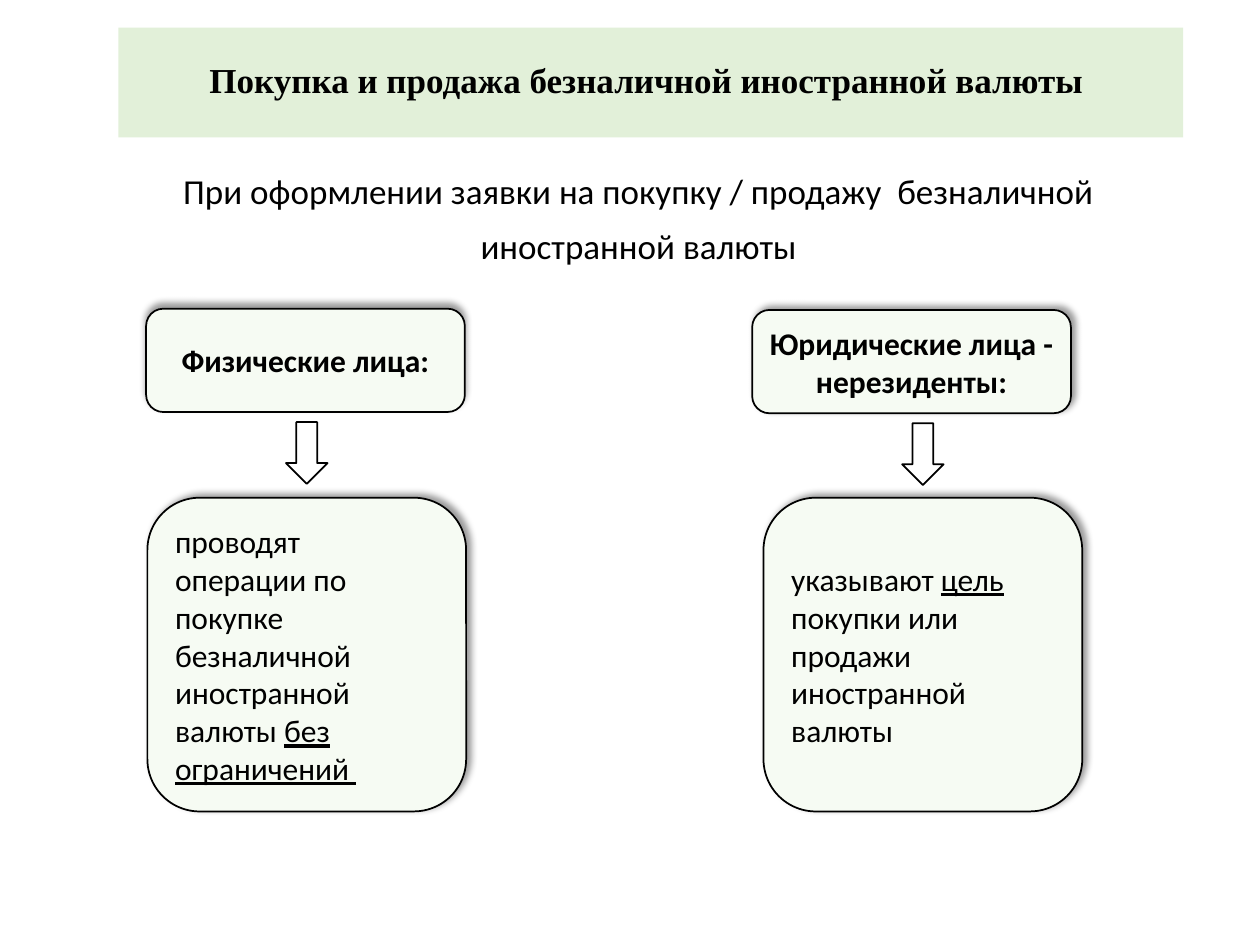
from dataclasses import dataclass

from lxml import etree
from pptx import Presentation
from pptx.dml.color import RGBColor
from pptx.enum.shapes import MSO_SHAPE
from pptx.enum.text import MSO_ANCHOR, MSO_AUTO_SIZE, PP_ALIGN
from pptx.oxml.ns import qn
from pptx.util import Inches, Pt

ROUNDED = MSO_SHAPE.ROUNDED_RECTANGLE
DOWN_ARROW = MSO_SHAPE.DOWN_ARROW
MIDDLE, TOP = MSO_ANCHOR.MIDDLE, MSO_ANCHOR.TOP
NO_AUTOFIT = MSO_AUTO_SIZE.NONE
CENTER, LEFT = PP_ALIGN.CENTER, PP_ALIGN.LEFT

COLUMNS, ROWS = 100, 75
WIDTH, HEIGHT = Inches(10), Inches(7.5)
BLACK, WHITE = "000000", "FFFFFF"
TITLE_GREEN, CARD_GREEN = "E2F0D9", "F6FBF3"
BOX_COLUMNS, HEADER_ROWS, DETAIL_ROWS = 25.3, 8.2, 24.9
ARROW_COLUMNS, ARROW_ROWS = 3.3, 4.9


@dataclass(frozen=True)
class Area:
    column: float
    row: float
    columns: float
    rows: float


@dataclass(frozen=True)
class Run:
    text: str
    size: int = 18
    bold: bool = False
    underline: bool = False
    font: str = "Calibri"


@dataclass(frozen=True)
class Branch:
    header_column: float
    header_row: float
    detail_column: float
    header_shadow: int
    header: str
    detail: tuple[Run, ...]


BRANCHES = (
    Branch(11.6, 24.5, 11.7, 270, "Физические лица:", (
        Run("проводят операции по покупке безналичной иностранной валюты "),
        Run("без ограничений ", underline=True),
    )),
    Branch(59.7, 24.6, 60.6, 315, "Юридические лица - нерезиденты:", (
        Run("указывают "),
        Run("цель", underline=True),
        Run(" покупки или продажи иностранной валюты"),
    )),
)


def color(value: str) -> RGBColor:
    return RGBColor.from_string(value)


def bounds(area: Area) -> tuple[int, int, int, int]:
    return (
        round(WIDTH * area.column / COLUMNS),
        round(HEIGHT * area.row / ROWS),
        round(WIDTH * area.columns / COLUMNS),
        round(HEIGHT * area.rows / ROWS),
    )


def place(shape, area: Area) -> None:
    shape.left, shape.top, shape.width, shape.height = bounds(area)


def add_runs(paragraph, runs: tuple[Run, ...], alignment: PP_ALIGN) -> None:
    paragraph.alignment = alignment
    for item in runs:
        run = paragraph.add_run()
        run.text = item.text
        run.font.name = item.font
        run.font.size = Pt(item.size)
        run.font.bold = item.bold
        run.font.underline = item.underline
        run.font.color.rgb = color(BLACK)


def add_shadow(shape, angle: int) -> None:
    effects = shape._element.spPr.find(qn("a:effectLst"))
    shadow = etree.SubElement(
        effects, qn("a:outerShdw"), blurRad=str(Pt(4)), dist=str(Pt(3)),
        dir=str(angle * 60000), algn="ctr", rotWithShape="0")
    tint = etree.SubElement(shadow, qn("a:srgbClr"), val=BLACK)
    etree.SubElement(tint, qn("a:alpha"), val="40000")


def add_outlined(slide, kind: MSO_SHAPE, area: Area, fill: str):
    shape = slide.shapes.add_shape(kind, *bounds(area))
    shape.fill.solid()
    shape.fill.fore_color.rgb = color(fill)
    shape.line.color.rgb = color(BLACK)
    shape.line.width = Pt(1)
    shape.shadow.inherit = False
    return shape


def add_card(slide, area: Area, runs: tuple[Run, ...], alignment: PP_ALIGN, angle: int) -> None:
    card = add_outlined(slide, ROUNDED, area, CARD_GREEN)
    add_shadow(card, angle)
    card.text_frame.word_wrap = True
    card.text_frame.vertical_anchor = MIDDLE
    add_runs(card.text_frame.paragraphs[0], runs, alignment)


def add_branch(slide, branch: Branch) -> None:
    header = Area(branch.header_column, branch.header_row, BOX_COLUMNS, HEADER_ROWS)
    detail = Area(branch.detail_column, 39.5, BOX_COLUMNS, DETAIL_ROWS)
    arrow = Area(
        detail.column + (BOX_COLUMNS - ARROW_COLUMNS) / 2,
        header.row + HEADER_ROWS + 0.8, ARROW_COLUMNS, ARROW_ROWS)
    add_card(slide, detail, branch.detail, LEFT, 315)
    add_card(slide, header, (Run(branch.header, bold=True),), CENTER, branch.header_shadow)
    add_outlined(slide, DOWN_ARROW, arrow, WHITE)


def fill_title(title) -> None:
    place(title, Area(9.4, 2.2, 84.5, 8.7))
    title.fill.solid()
    title.fill.fore_color.rgb = color(TITLE_GREEN)
    frame = title.text_frame
    frame.auto_size = NO_AUTOFIT
    frame.word_wrap = False
    frame.vertical_anchor = MIDDLE
    frame.margin_left = frame.margin_right = frame.margin_top = frame.margin_bottom = 0
    paragraph = frame.paragraphs[0]
    paragraph.line_spacing = 0.9
    text = "Покупка и продажа безналичной иностранной валюты "
    add_runs(paragraph, (Run(text, 20, bold=True, font="Times New Roman"),), CENTER)


def fill_introduction(body) -> None:
    place(body, Area(7, 13.3, 88, 8.5))
    frame = body.text_frame
    frame.auto_size = NO_AUTOFIT
    frame.word_wrap = True
    frame.vertical_anchor = TOP
    lines = ("При оформлении заявки на покупку / продажу  безналичной ", "иностранной валюты ")
    for index, line in enumerate(lines):
        paragraph = frame.add_paragraph() if index else frame.paragraphs[0]
        properties = paragraph._p.get_or_add_pPr()
        properties.set("marL", "0")
        properties.set("indent", "0")
        etree.SubElement(properties, qn("a:buNone"))
        paragraph.line_spacing = 0.9
        paragraph.space_before = Pt(10 if index else 0)
        add_runs(paragraph, (Run(line, 20),), CENTER)


def main() -> None:
    presentation = Presentation()
    presentation.slide_width, presentation.slide_height = WIDTH, HEIGHT
    slide = presentation.slides.add_slide(presentation.slide_layouts[1])
    fill_title(slide.shapes.title)
    fill_introduction(slide.placeholders[1])
    for branch in BRANCHES:
        add_branch(slide, branch)
    presentation.save("out.pptx")


if __name__ == "__main__":
    main()
